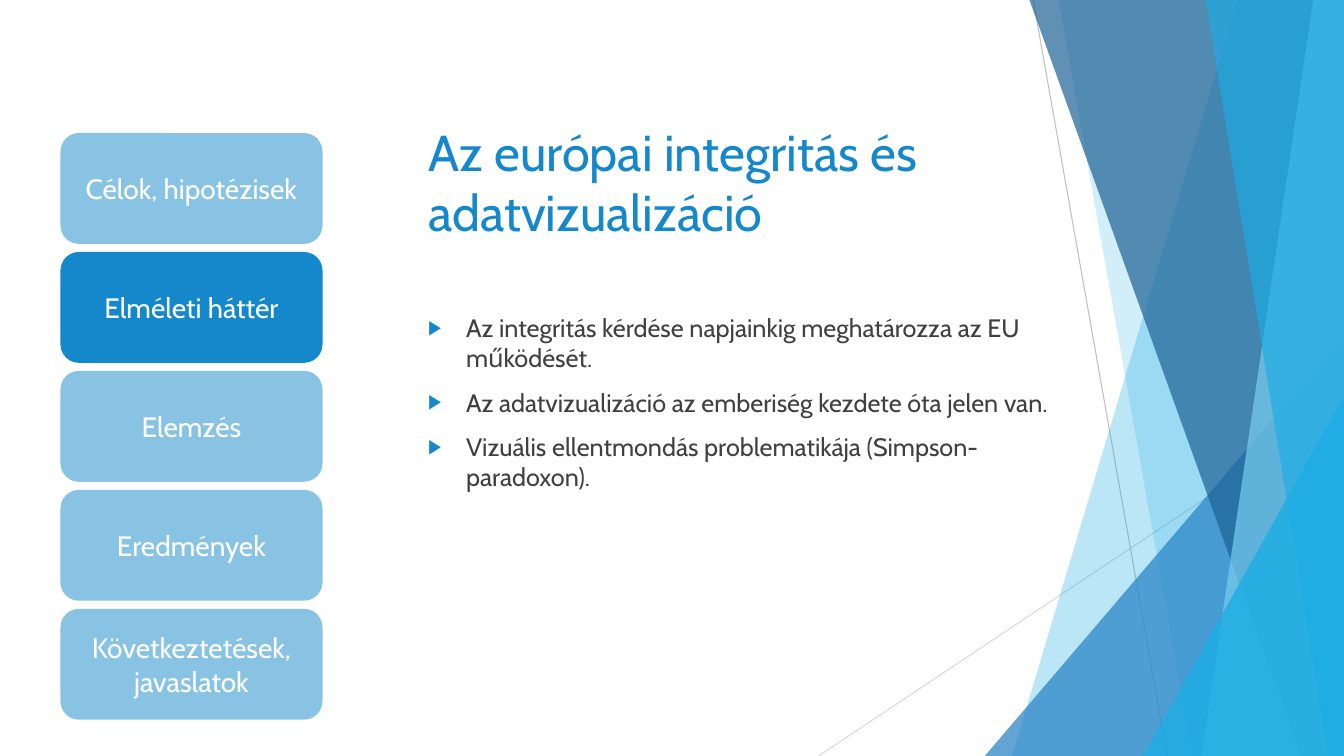
import pptx
import pptx.dml.color
import pptx.enum.shapes
import pptx.enum.text
import pptx.oxml
import pptx.oxml.ns
import pptx.util

Pt = pptx.util.Pt
Shapes = pptx.enum.shapes.MSO_SHAPE
Align = pptx.enum.text.PP_ALIGN
Anchor = pptx.enum.text.MSO_ANCHOR

WIDTH, HEIGHT = 960, 540
FACET_TOP = -0.72
COLORS = {
    "accent": "1488CA", "body": "404040", "white": "FFFFFF",
    "gray": "BFBFBF", "pale_gray": "D9D9D9",
    "cyan": "1CADE4", "blue": "2683C6", "navy": "1D6294", "sky": "77CEEF",
}


def set_all(target, values):
    for name, value in values.items():
        setattr(target, name, value)


def element(tag, **attributes):
    node = pptx.oxml.parse_xml(f"<a:{tag} {pptx.oxml.ns.nsdecls('a')}/>")
    for name, value in attributes.items():
        node.set(name, str(value))
    return node


class Deck:
    """Holds the slide and the shared style."""

    font = "Cabin"

    def __init__(self):
        self.presentation = pptx.Presentation()
        set_all(self.presentation,
                {"slide_width": Pt(WIDTH), "slide_height": Pt(HEIGHT)})
        blank = self.presentation.slide_layouts[6]
        self.slide = self.presentation.slides.add_slide(blank)
        self.shapes = self.slide.shapes

    def color(self, name):
        return pptx.dml.color.RGBColor.from_string(COLORS[name])

    def paint(self, shape, color, opacity):
        shape.shadow.inherit = False
        shape.line.fill.background()
        shape.fill.solid()
        shape.fill.fore_color.rgb = self.color(color)
        if opacity < 100:
            tint = shape._element.spPr.find(".//" + pptx.oxml.ns.qn("a:srgbClr"))
            tint.append(element("alpha", val=opacity * 1000))

    def line(self, start, end, color):
        ray = self.shapes.add_connector(
            pptx.enum.shapes.MSO_CONNECTOR.STRAIGHT, *map(Pt, start + end))
        ray.line.width = Pt(0.75)
        ray.line.color.rgb = self.color(color)
        ray._element.spPr.append(element("effectLst"))

    def facet(self, top_left, bottom_left, color, opacity):
        """A band that reaches the right edge of the slide."""
        corners = [(WIDTH, FACET_TOP), (WIDTH, HEIGHT), (bottom_left, HEIGHT)]
        outline = self.shapes.build_freeform(Pt(top_left), Pt(FACET_TOP))
        outline.add_line_segments([(Pt(x), Pt(y)) for x, y in corners])
        self.paint(outline.convert_to_shape(), color, opacity)

    def corner(self, left, top, color, opacity):
        """A right triangle in the bottom right corner."""
        triangle = self.shapes.add_shape(
            Shapes.ISOSCELES_TRIANGLE,
            *map(Pt, (left, top, WIDTH - left, HEIGHT - top)))
        triangle.adjustments[0] = 1
        self.paint(triangle, color, opacity)

    def put_text(self, shape, lines, size, color, frame_format, paragraph_format):
        frame = shape.text_frame
        set_all(frame, {"word_wrap": True, **frame_format})
        frame.text = "\n".join(lines)
        for paragraph in frame.paragraphs:
            set_all(paragraph, paragraph_format)
            font = paragraph.runs[0].font
            set_all(font, {"name": self.font, "size": Pt(size)})
            font.color.rgb = self.color(color)
        return frame.paragraphs

    def text(self, box, lines, size, color, **paragraph_format):
        return self.put_text(self.shapes.add_textbox(*map(Pt, box)), lines, size,
                             color, {"vertical_anchor": Anchor.TOP}, paragraph_format)

    def bullets(self, box, lines, size, color):
        for paragraph in self.text(box, lines, size, color, space_before=Pt(10)):
            properties = paragraph._p.get_or_add_pPr()
            for name, value in {"marL": Pt(27), "indent": Pt(-27)}.items():
                properties.set(name, str(value))
            bullet_color = element("buClr")
            bullet_color.append(element("srgbClr", val=COLORS["accent"]))
            properties.extend([bullet_color, element("buSzPct", val=80000),
                               element("buFont", typeface="Arial"),
                               element("buChar", char="▶")])

    def button(self, box, label, opacity):
        button = self.shapes.add_shape(Shapes.ROUNDED_RECTANGLE, *map(Pt, box))
        self.paint(button, "accent", opacity)
        self.put_text(button, [label], 20, "white",
                      {"vertical_anchor": Anchor.MIDDLE}, {"alignment": Align.CENTER})


def main():
    deck = Deck()

    # Faceted decoration on the right
    deck.line((738, 0), (833.76, HEIGHT), "gray")
    deck.line((WIDTH, 290.16), (584.64, HEIGHT), "pale_gray")
    deck.facet(884.16, 722.88, "cyan", 30)
    deck.facet(756, 851.76, "cyan", 20)
    deck.corner(703.44, 239.76, "blue", 72)
    deck.facet(735.12, 929.52, "navy", 70)
    deck.facet(938.16, 858.24, "sky", 70)
    deck.facet(861.12, 948.96, "cyan", 65)
    deck.corner(816.48, 282.96, "cyan", 80)

    # Title and main points
    deck.text((298.8, 82.8, 430.56, 126),
              ["Az európai integritás és adatvizualizáció"], 36, "accent")
    deck.bullets((298.8, 219.6, 482.4, 209.52), [
        "Az integritás kérdése napjainkig meghatározza az EU működését.",
        "Az adatvizualizáció az emberiség kezdete óta jelen van.",
        "Vizuális ellentmondás problematikája (Simpson-paradoxon).",
    ], 18, "body")

    # Chapter navigation, current chapter in full color
    chapters = ["Célok, hipotézisek", "Elméleti háttér", "Elemzés",
                "Eredmények", "Következtetések, javaslatok"]
    current = "Elméleti háttér"
    for row, chapter in enumerate(chapters):
        deck.button((43.2, 95.04 + row * 84.96, 187.2, 79.2), chapter,
                    100 if chapter == current else 50)

    deck.presentation.save("out.pptx")


if __name__ == "__main__":
    main()
